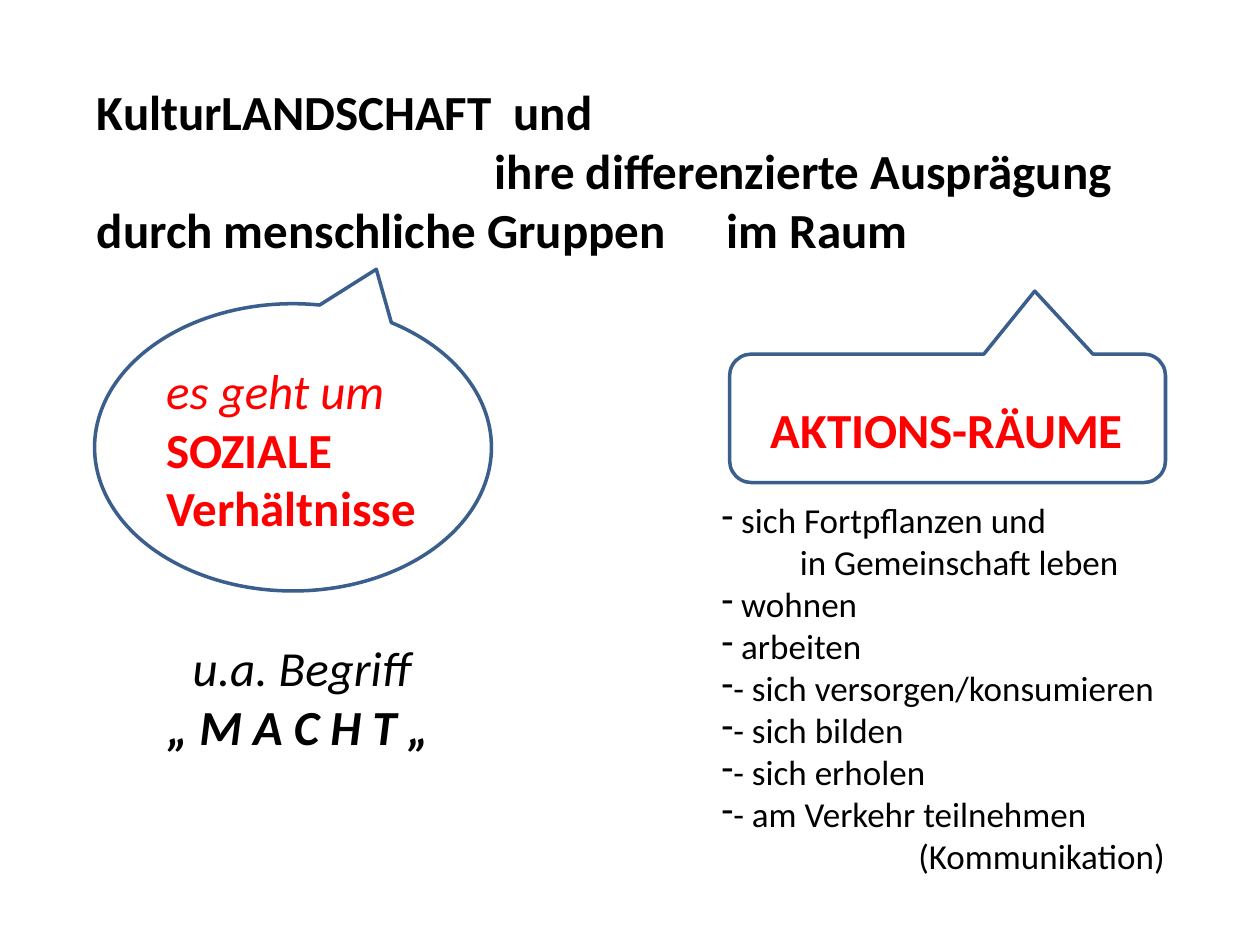
from lxml import etree
from pptx import Presentation
from pptx.dml.color import RGBColor
from pptx.enum import shapes, text
from pptx.oxml.ns import qn
from pptx.util import Inches, Pt

COLORS = {"ink": "000000", "accent": "FF0000", "paper": "FFFFFF", "outline": "3A5F8C"}
FONT = "Calibri"
BOLD, ITALIC = {"bold": True}, {"italic": True}

# Content: a paragraph is a list of (text, format) runs plus paragraph options
TITLE = [
    ([("KulturLANDSCHAFT  und", BOLD)], {}),
    ([("ihre differenzierte Ausprägung", BOLD)], {"indent": 3.16}),
    ([("durch menschliche Gruppen\tim Raum", BOLD)], {"tab": 6.17}),
]
SOCIAL = [
    ([("es geht um", ITALIC)], {}),
    ([("SOZIALE", BOLD)], {}),
    ([("Verhältnisse", BOLD)], {}),
]
SPACES = [([("AKTIONS-RÄUME", BOLD)], {})]
POWER = [
    ([(" ", {"size": 18}), ("u.a. Begriff", ITALIC)], {}),
    ([("„ M A C H T „", {**BOLD, **ITALIC})], {}),
]
DASH = {"bullet": "-"}
ACTIVITIES = [
    ([(" sich Fortpflanzen und", {})], DASH),
    ([("in Gemeinschaft leben", {})], {"indent": 0.62}),
    ([(" wohnen", {})], DASH),
    ([(" arbeiten", {})], DASH),
    ([("- sich versorgen/konsumieren", {})], DASH),
    ([("- sich bilden", {})], DASH),
    ([("- sich erholen", {})], DASH),
    ([("- am Verkehr teilnehmen", {})], DASH),
    ([("(Kommunikation)", {})], {"indent": 1.56}),
]


def rgb(name):
    return RGBColor.from_string(COLORS[name])


def format_paragraph(paragraph, indent=0, tab=None, bullet=None):
    properties = paragraph._p.get_or_add_pPr()
    properties.set("marL", str(Inches(indent)))
    properties.set("indent", "0")
    if bullet:
        etree.SubElement(properties, qn("a:buFontTx"))
        etree.SubElement(properties, qn("a:buChar")).set("char", bullet)
    if tab:
        stops = etree.SubElement(properties, qn("a:tabLst"))
        stop = etree.SubElement(stops, qn("a:tab"))
        stop.set("pos", str(Inches(tab)))
        stop.set("algn", "l")


def add_text(slide, box, paragraphs, size=28, color="ink", align=text.PP_ALIGN.LEFT):
    frame = slide.shapes.add_textbox(*map(Inches, box)).text_frame
    frame.word_wrap = True
    for number, (runs, options) in enumerate(paragraphs):
        paragraph = frame.add_paragraph() if number else frame.paragraphs[0]
        paragraph.alignment = align
        format_paragraph(paragraph, **options)
        for words, style in runs:
            run = paragraph.add_run()
            run.text = words
            run.font.name = FONT
            run.font.size = Pt(style.get("size", size))
            run.font.bold = style.get("bold", False)
            run.font.italic = style.get("italic", False)
            run.font.color.rgb = rgb(color)


def add_callout(slide, kind, box, adjustments):
    shape = slide.shapes.add_shape(kind, *map(Inches, box))
    shape.rotation = 180  # turns the pointer upwards
    shape.shadow.inherit = False
    shape.fill.solid()
    shape.fill.fore_color.rgb = rgb("paper")
    shape.line.color.rgb = rgb("outline")
    shape.line.width = Pt(2)
    for number, value in enumerate(adjustments):
        shape.adjustments[number] = value


def main():
    presentation = Presentation()
    presentation.slide_width, presentation.slide_height = Inches(10), Inches(7.5)
    slide = presentation.slides.add_slide(presentation.slide_layouts[6])
    kinds = shapes.MSO_SHAPE

    # Heading
    add_text(slide, (0.67, 0.6, 8.82, 1.51), TITLE)

    # Callouts, each with its text on top
    add_callout(slide, kinds.OVAL_CALLOUT, (0.75, 2.41, 3.15, 2.28), (-0.21, 0.62))
    add_text(slide, (1.22, 2.81, 3.78, 1.51), SOCIAL, color="accent")
    add_callout(slide, kinds.ROUNDED_RECTANGULAR_CALLOUT, (5.79, 2.81, 3.46, 1.02),
                (-0.2, 0.99, 0.17))
    add_text(slide, (6.02, 3.12, 3.07, 0.57), SPACES, color="accent")

    # Notes under the callouts
    add_text(slide, (0.75, 5.01, 3.23, 1.04), POWER, align=text.PP_ALIGN.CENTER)
    add_text(slide, (5.63, 3.91, 3.86, 3.13), ACTIVITIES, size=20)

    presentation.save("out.pptx")


if __name__ == "__main__":
    main()
